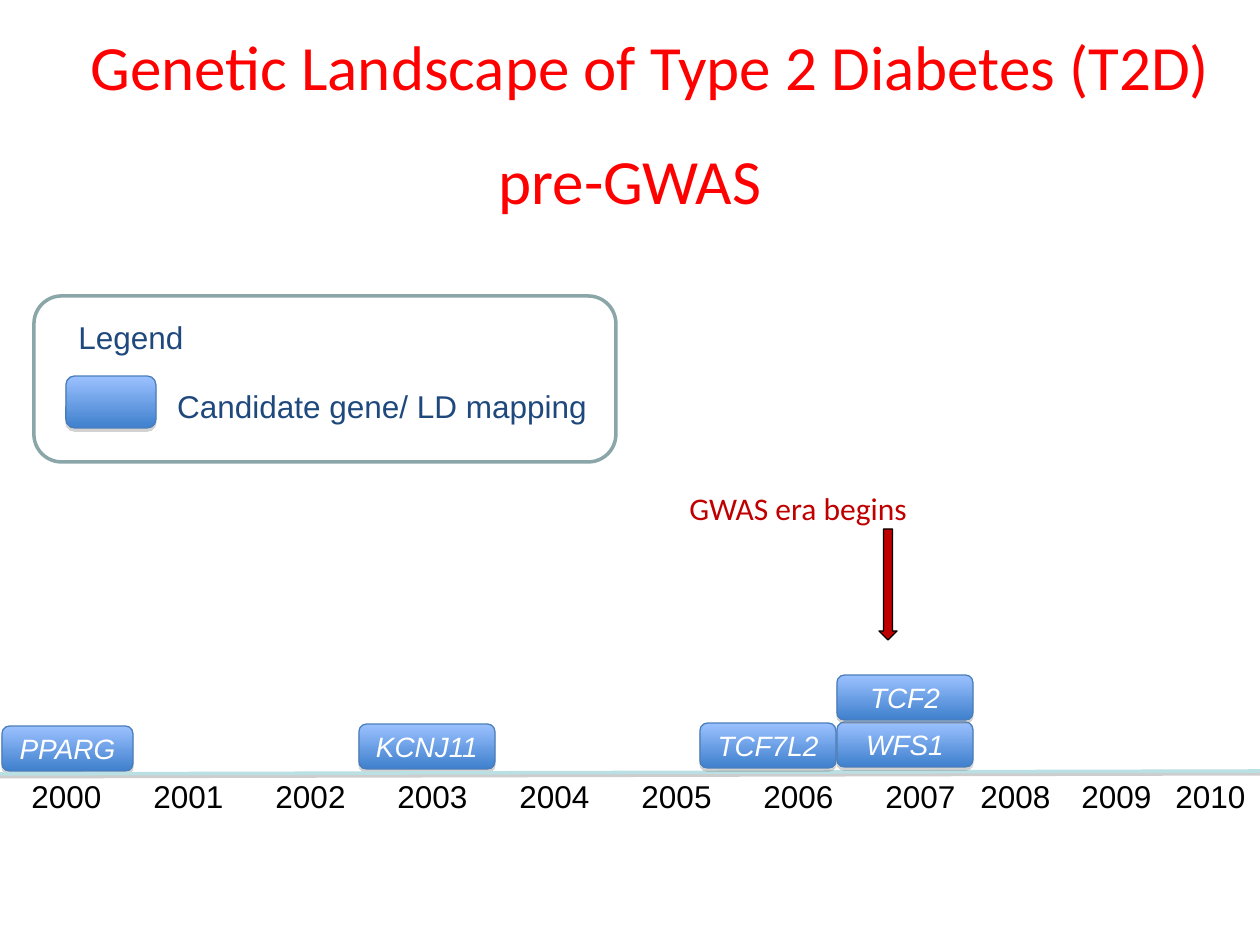
from lxml import etree
from pptx import Presentation, util as u
from pptx.dml.color import RGBColor
from pptx.enum import shapes, text
from pptx.oxml.ns import qn

SCALE = 914400 / 126
KIND = shapes.MSO_SHAPE
MID = text.PP_ALIGN.CENTER


def px(n):
    return u.Emu(round(n * SCALE))


def rgb(code):
    return RGBColor.from_string(code)


class Board:
    sans, body = "Arial", "Calibri"
    navy, red, dark = "1F497D", "FF0000", "C00000"

    def __init__(self, deck):
        self.slide = deck.slides.add_slide(deck.slide_layouts[5])
        self.root = self.slide.shapes
        self.shapes = self.root

    def font(self, para, size, color, face, italic=None):
        font = para.font
        font.size, font.name, font.italic = u.Pt(size), face, italic
        font.color.rgb = rgb(color)

    def shade(self, item, alpha, dist):
        """Put a soft grey shadow straight below the item; alpha 0 means none."""
        props = item._element.spPr
        for old in props.findall(qn("a:effectLst")):
            props.remove(old)
        effects = etree.SubElement(props, qn("a:effectLst"))
        if alpha:
            drop = etree.SubElement(effects, qn("a:outerShdw"), blurRad="0",
                                    dist=str(u.Pt(dist)), dir="5400000", rotWithShape="0")
            tint = etree.SubElement(drop, qn("a:srgbClr"), val="808080")
            etree.SubElement(tint, qn("a:alpha"), val=str(alpha * 1000))

    def title(self, words, x, y, w, h, shift):
        """Shift indents the first line, moving its centre right by half."""
        box = self.root.title
        box.left, box.top, box.width, box.height = map(px, (x, y, w, h))
        frame = box.text_frame
        frame.text = words
        frame.auto_size = text.MSO_AUTO_SIZE.NONE
        frame.vertical_anchor = text.MSO_ANCHOR.BOTTOM
        para = frame.paragraphs[0]
        para.alignment, para.line_spacing = MID, 1.5
        self.font(para, 36, self.red, self.body)
        props = para._p.get_or_add_pPr()
        props.set("marL", "0")
        props.set("indent", str(px(shift)))

    def shape(self, kind, x, y, w, h, line, width, fill=None):
        item = self.shapes.add_shape(kind, *map(px, (x, y, w, h)))
        item.shadow.inherit = False
        item.line.color.rgb = rgb(line)
        item.line.width = u.Pt(width)
        if fill:
            item.fill.solid()
            item.fill.fore_color.rgb = rgb(fill)
        else:
            item.fill.background()
        return item

    def gene(self, x, y, w, h, name=""):
        item = self.shape(KIND.ROUNDED_RECTANGLE, x, y, w, h, "4A7EBB", 0.75)
        item.fill.gradient()
        item.fill.gradient_angle = 270
        for stop, color in zip(item.fill.gradient_stops, ("9BC1FF", "3F80CD")):
            stop.color.rgb = rgb(color)
        self.shade(item, 35, 1.8)
        if name:
            frame = item.text_frame
            frame.text = name
            frame.vertical_anchor = text.MSO_ANCHOR.MIDDLE
            para = frame.paragraphs[0]
            para.alignment = MID
            self.font(para, 16, "FFFFFF", self.sans, True)

    def label(self, words, x, y, w, color, face=sans, align=None, wrap=False):
        box = self.shapes.add_textbox(*map(px, (x, y, w, 50)))
        frame = box.text_frame
        frame.text = words
        frame.word_wrap = wrap
        frame.auto_size = text.MSO_AUTO_SIZE.SHAPE_TO_FIT_TEXT
        para = frame.paragraphs[0]
        para.alignment = align
        self.font(para, 18, color, face)

    def axis(self, x1, y1, x2, y2):
        line = self.shapes.add_connector(shapes.MSO_CONNECTOR.STRAIGHT,
                                         *map(px, (x1, y1, x2, y2)))
        line.line.color.rgb = rgb("BBE0E3")
        line.line.width = u.Pt(2)
        self.shade(line, 38, 1.6)

    def legend(self):
        self.shapes = self.root.add_group_shape().shapes
        self.shape(KIND.ROUNDED_RECTANGLE, 34, 296, 582, 166, "8AA6A8", 2)
        self.gene(66, 376, 90, 52)
        self.label("Candidate gene/ LD mapping", 163, 381, 438, self.navy, align=MID)
        self.label("Legend", 66, 312, 131, self.navy)
        self.shapes = self.root


def main():
    deck = Presentation()
    deck.slide_width, deck.slide_height = px(1260), px(945)
    board = Board(deck)
    board.title("Genetic Landscape of Type 2 Diabetes (T2D) pre-GWAS", 0, 92, 1260, 131, 40)

    board.gene(2, 726, 131, 45, "PPARG")
    board.gene(359, 724, 136, 45, "KCNJ11")
    board.axis(0, 774, 1260, 771)
    lefts = [5 + 122 * i for i in range(8)] + [954, 1055, 1149]
    for year, x in enumerate(lefts, 2000):
        board.label(str(year), x, 771, 123, "000000", align=MID, wrap=True)
    for name, x, y in (("TCF7L2", 700, 723), ("WFS1", 837, 722), ("TCF2", 837, 675)):
        board.gene(x, y, 136, 45, name)

    board.legend()
    board.shape(KIND.DOWN_ARROW, 879, 529, 18, 111, "000000", 0.75, board.dark)
    board.label("GWAS era begins", 677, 483, 246, board.dark, board.body)
    deck.save("out.pptx")


if __name__ == "__main__":
    main()
